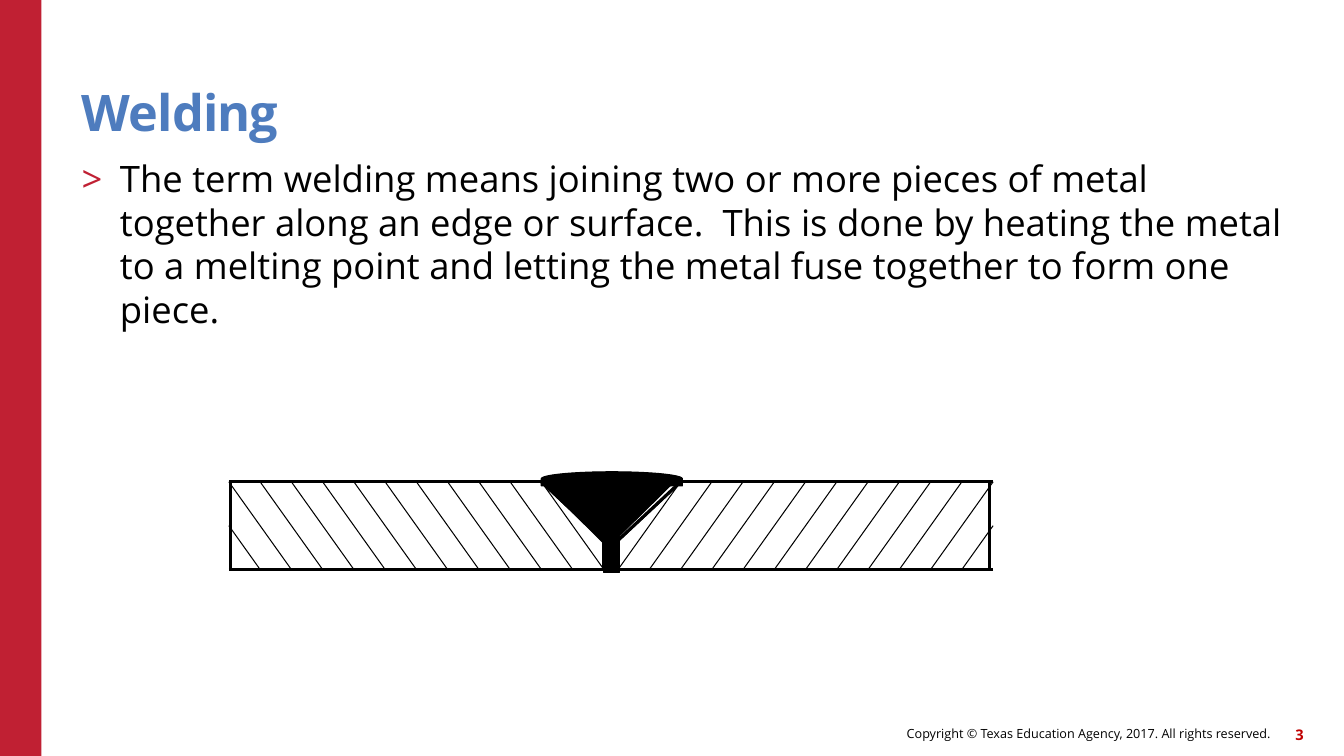
from dataclasses import dataclass

from lxml.etree import SubElement
from pptx import Presentation
from pptx.dml.color import RGBColor
from pptx.enum.shapes import MSO_CONNECTOR, MSO_SHAPE
from pptx.enum.text import MSO_ANCHOR, PP_ALIGN
from pptx.oxml.ns import qn
from pptx.util import Inches, Pt


@dataclass(frozen=True)
class Theme:
    font: str = "Open Sans"
    red: str = "C02033"
    number_red: str = "C00000"
    blue: str = "4E7CBE"
    black: str = "000000"
    title_size: float = 36
    body_size: float = 26
    footer_size: float = 9
    number_size: float = 10.5
    outline: float = 2.25
    hatch: float = 0.75


THEME = Theme()
SLIDE_WIDTH, SLIDE_HEIGHT = 13.33, 7.5
COLUMN, ROW = 0.31, 0.29
PLATE_TOP, LEFT_EDGE, RIGHT_EDGE = 4.78, 2.27, 9.85
PLATE_COLUMNS, PLATE_ROWS, HATCH_RUN = 12, 3, 2
BEVEL_COLUMN, BEVEL_ROW = 10, 2

DEFINITION = (
    "The term welding means joining two or more pieces of metal together along an edge "
    "or surface.  This is done by heating the metal to a melting point and letting the "
    "metal fuse together to form one piece."
)


def color(value):
    return RGBColor.from_string(value)


def add_text(slide, box, text, size, ink, bold=False, align=PP_ALIGN.LEFT,
             anchor=MSO_ANCHOR.TOP, spacing=1.0, bullet=None):
    frame = slide.shapes.add_textbox(*map(Inches, box)).text_frame
    frame.word_wrap = True
    frame.margin_left = frame.margin_right = frame.margin_top = frame.margin_bottom = 0
    frame.vertical_anchor = anchor
    paragraph = frame.paragraphs[0]
    paragraph.text = text
    paragraph.alignment = align
    paragraph.line_spacing = spacing
    if bullet:
        add_bullet(paragraph, bullet)
    font = paragraph.font
    font.name, font.size, font.bold = THEME.font, Pt(size), bold
    font.color.rgb = color(ink)
    return paragraph


def add_bullet(paragraph, mark):
    properties = paragraph._p.get_or_add_pPr()
    properties.set("marL", str(Inches(0.38)))
    properties.set("indent", str(-Inches(0.38)))
    bullet_color = SubElement(properties, qn("a:buClr"))
    SubElement(bullet_color, qn("a:srgbClr"), val=THEME.red)
    SubElement(properties, qn("a:buFont"), typeface=THEME.font)
    SubElement(properties, qn("a:buChar"), char=mark)


def add_solid(shapes, kind, box, fill, line_width=None, rotation=0):
    solid = shapes.add_shape(kind, *map(Inches, box))
    solid.shadow.inherit = False
    solid.rotation = rotation
    solid.fill.solid()
    solid.fill.fore_color.rgb = color(fill)
    if line_width:
        solid.line.color.rgb = color(fill)
        solid.line.width = Pt(line_width)
    else:
        solid.line.fill.background()


def grid_point(column, row, edge=LEFT_EDGE, direction=1):
    return Inches(edge + direction * column * COLUMN), Inches(PLATE_TOP + row * ROW)


def add_stroke(joint, start, end, width, edge=LEFT_EDGE, direction=1):
    stroke = joint.shapes.add_connector(
        MSO_CONNECTOR.STRAIGHT,
        *grid_point(*start, edge, direction), *grid_point(*end, edge, direction))
    stroke.line.color.rgb = color(THEME.black)
    stroke.line.width = Pt(width)
    SubElement(stroke._element.spPr, qn("a:effectLst"))


def add_plate(joint, edge, direction, end_column):
    outline = [
        ((0, PLATE_ROWS), (PLATE_COLUMNS, PLATE_ROWS)),
        ((PLATE_COLUMNS, BEVEL_ROW), (BEVEL_COLUMN, 0)),
        ((BEVEL_COLUMN, 0), (0, 0)),
        ((end_column, 0), (end_column, PLATE_ROWS)),
    ]
    hatching = [((0, PLATE_ROWS / 2), (HATCH_RUN / 2, PLATE_ROWS))]
    hatching += [((column, 0), (column + HATCH_RUN, PLATE_ROWS))
                 for column in range(BEVEL_COLUMN + 1)]
    for strokes, width in ((outline, THEME.outline), (hatching, THEME.hatch)):
        for start, end in strokes:
            add_stroke(joint, start, end, width, edge, direction)


def add_weld(joint):
    root_left, root_right = PLATE_COLUMNS, PLATE_COLUMNS + 0.5
    contour = [
        ((BEVEL_COLUMN, 0), (root_left, BEVEL_ROW)),
        ((root_left, BEVEL_ROW), (root_left, PLATE_ROWS)),
        ((root_left, PLATE_ROWS), (root_right, PLATE_ROWS)),
        ((root_left, 3.07), (root_right, 3.07)),
        ((root_right, PLATE_ROWS), (root_right, BEVEL_ROW)),
        ((root_right, BEVEL_ROW), (root_right + 2, 0)),
    ]
    for start, end in contour:
        add_stroke(joint, start, end, THEME.hatch)
    bead = [
        (MSO_SHAPE.FLOWCHART_DELAY, 12.03, -2.52, 0.45, 4.83, 270),
        (MSO_SHAPE.ISOSCELES_TRIANGLE, BEVEL_COLUMN, 0, 4.25, 2.24, 180),
        (MSO_SHAPE.RECTANGLE, root_left, 1.86, 0.5, 1.24, 0),
    ]
    for kind, column, row, columns, rows, rotation in bead:
        box = (LEFT_EDGE + column * COLUMN, PLATE_TOP + row * ROW,
               columns * COLUMN, rows * ROW)
        add_solid(joint.shapes, kind, box, THEME.black, THEME.hatch, rotation)


def main():
    presentation = Presentation()
    presentation.slide_width = Inches(SLIDE_WIDTH)
    presentation.slide_height = Inches(SLIDE_HEIGHT)
    slide = presentation.slides.add_slide(presentation.slide_layouts[6])

    add_solid(slide.shapes, MSO_SHAPE.RECTANGLE, (0, 0, 0.41, SLIDE_HEIGHT), THEME.red)
    add_text(slide, (6.14, 7.12, 6.46, 0.32),
             "Copyright © Texas Education Agency, 2017. All rights reserved.",
             THEME.footer_size, THEME.black, align=PP_ALIGN.RIGHT, anchor=MSO_ANCHOR.MIDDLE)
    add_text(slide, (12.51, 7.13, 0.42, 0.32), "3", THEME.number_size, THEME.number_red,
             bold=True, align=PP_ALIGN.RIGHT, anchor=MSO_ANCHOR.MIDDLE)
    title = add_text(slide, (0.81, 0.45, 11, 0.96), "Welding", THEME.title_size, THEME.blue,
                     bold=True, anchor=MSO_ANCHOR.BOTTOM, spacing=0.9)
    title.runs[0].font._element.set("spc", "-60")
    add_text(slide, (0.81, 1.55, 12.09, 5.18), DEFINITION, THEME.body_size, THEME.black,
             bullet=">")

    joint = slide.shapes.add_group_shape()
    add_plate(joint, LEFT_EDGE, 1, 0.06)
    add_stroke(joint, (PLATE_COLUMNS, PLATE_ROWS), (PLATE_COLUMNS, BEVEL_ROW), THEME.outline)
    add_plate(joint, RIGHT_EDGE, -1, 0.12)
    add_weld(joint)
    presentation.save("out.pptx")


if __name__ == "__main__":
    main()
